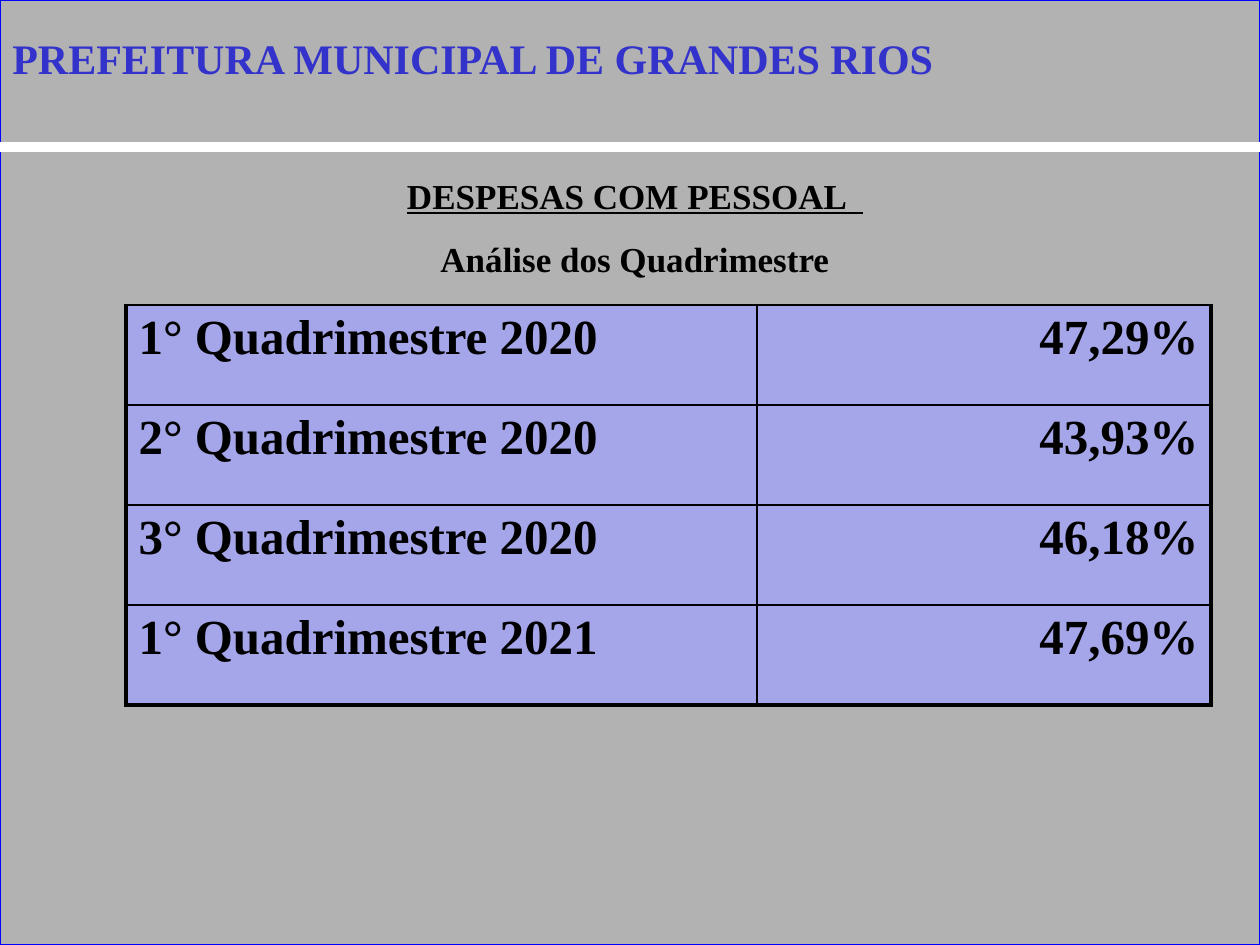
from lxml.etree import SubElement
from pptx import Presentation
from pptx.dml.color import RGBColor
from pptx.enum.shapes import MSO_CONNECTOR as CONN, MSO_SHAPE as SHAPE
from pptx.enum.text import PP_ALIGN as ALIGN
from pptx.oxml.ns import qn
from pptx.util import Inches, Pt

W, H = 1260, 945
FONT = "Times New Roman"
BLACK = RGBColor(0x00, 0x00, 0x00)
WHITE = RGBColor(0xFF, 0xFF, 0xFF)
GRAY = RGBColor(0xB2, 0xB2, 0xB2)
BLUE = RGBColor(0x00, 0x00, 0xFF)
TITLE_BLUE = RGBColor(0x33, 0x33, 0xCC)
SHADOW = RGBColor(0x80, 0x80, 0x80)
LILAC = RGBColor(0xA5, 0xA5, 0xE9)

ROWS = [
    ("1° Quadrimestre 2020", "47,29%"),
    ("2° Quadrimestre 2020", "43,93%"),
    ("3° Quadrimestre 2020", "46,18%"),
    ("1° Quadrimestre 2021", "47,69%"),
]


def px(n):
    return round(n * Inches(1) / 126)


def add_run(p, text, size, color=BLACK, underline=False):
    r = p.add_run()
    r.text = text
    r.font.name, r.font.size, r.font.bold = FONT, Pt(size), True
    r.font.color.rgb = color
    if underline:
        r.font.underline = True
    return r


def add_text_frame(slide, x, y, w, h):
    tf = slide.shapes.add_textbox(px(x), px(y), px(w), px(h)).text_frame
    tf.word_wrap = True
    return tf


def add_text_shadow(r):
    rPr = r.font._element
    effects = rPr.makeelement(qn("a:effectLst"))
    rPr.find(qn("a:solidFill")).addnext(effects)
    shadow = SubElement(effects, qn("a:outerShdw"), dist="35921", dir="2700000")
    SubElement(shadow, qn("a:srgbClr"), val=str(SHADOW))


def add_background(slide, x, y, w, h):
    sp = slide.shapes.add_shape(SHAPE.RECTANGLE, px(x), px(y), px(w), px(h))
    sp.shadow.inherit = False
    sp.fill.solid()
    sp.fill.fore_color.rgb = GRAY
    sp.line.color.rgb = BLUE
    sp.line.width = Pt(0.75)


def add_divider(slide, x, y, w):
    line = slide.shapes.add_connector(CONN.STRAIGHT, px(x), px(y), px(x + w), px(y))
    line.line.color.rgb = WHITE
    line.line.width = Pt(6)
    SubElement(line._element.spPr, qn("a:effectLst"))


def add_title(slide, x, y, w, h):
    p = add_text_frame(slide, x, y, w, h).paragraphs[0]
    add_text_shadow(add_run(p, "PREFEITURA MUNICIPAL DE GRANDES RIOS", 24, TITLE_BLUE))


def add_heading(slide, x, y, w, h):
    tf = add_text_frame(slide, x, y, w, h)
    heading, subheading = tf.paragraphs[0], tf.add_paragraph()
    for p in (heading, subheading):
        p.alignment = ALIGN.CENTER
        p.line_spacing = 1.5
    add_run(heading, "DESPESAS COM PESSOAL  ", 20, underline=True)
    add_run(subheading, "Análise dos Quadrimestre", 20)


def add_border(cell, side, width):
    ln = SubElement(cell._tc.get_or_add_tcPr(), qn(f"a:ln{side}"), w=str(Pt(width)))
    fill = SubElement(ln, qn("a:solidFill"))
    SubElement(fill, qn("a:srgbClr"), val=str(BLACK))


def add_table(slide, x, y, w, h):
    table = slide.shapes.add_table(len(ROWS), 2, px(x), px(y), px(w), px(h)).table
    table.first_row = table.horz_banding = False
    label_w = 631
    table.columns[0].width = px(label_w)
    table.columns[1].width = px(w - label_w)
    for i, values in enumerate(ROWS):
        for j, value in enumerate(values):
            cell = table.cell(i, j)
            outer = {"L": j == 0, "R": j == 1, "T": False, "B": i == len(ROWS) - 1}
            for side, thick in outer.items():
                add_border(cell, side, 2.25 if thick else 1)
            cell.fill.solid()
            cell.fill.fore_color.rgb = LILAC
            p = cell.text_frame.paragraphs[0]
            p.alignment = ALIGN.RIGHT if j else ALIGN.LEFT
            add_run(p, value, 28)


def main():
    prs = Presentation()
    prs.slide_width, prs.slide_height = px(W), px(H)
    s = prs.slides.add_slide(prs.slide_layouts[6])
    add_background(s, 0, 0, W, H)
    add_divider(s, 0, 147, W)
    add_heading(s, 73, 147, 1124, 644)
    add_table(s, 126, 305, 1085, 400)
    add_title(s, 0, 26, 1196, 63)
    prs.save("out.pptx")


if __name__ == "__main__":
    main()
